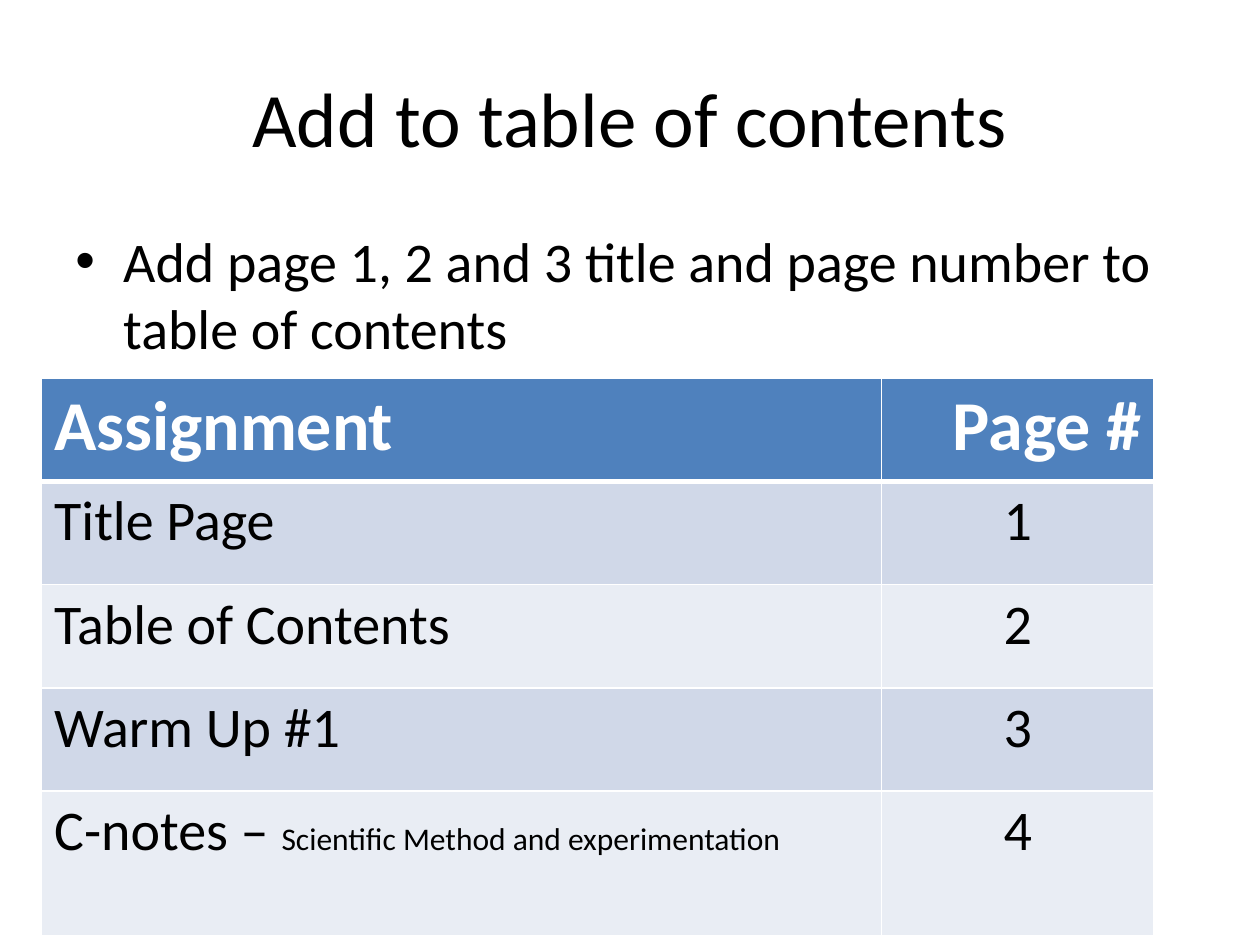
from lxml import etree
from pptx import Presentation
from pptx.dml.color import RGBColor
from pptx.enum.text import MSO_ANCHOR, PP_ALIGN
from pptx.oxml.ns import qn
from pptx.util import Inches, Pt

LEFT, CENTER, RIGHT = PP_ALIGN.LEFT, PP_ALIGN.CENTER, PP_ALIGN.RIGHT
TOP, MIDDLE = MSO_ANCHOR.TOP, MSO_ANCHOR.MIDDLE

BLACK = RGBColor(0x00, 0x00, 0x00)
WHITE = RGBColor(0xFF, 0xFF, 0xFF)
HEADER_BLUE = RGBColor(0x4F, 0x81, 0xBD)
BANDS = (RGBColor(0xD0, 0xD8, 0xE8), RGBColor(0xE9, 0xED, 0xF4))

WIDTH, HEIGHT = 10, 7.5
MARGIN = WIDTH * 0.05
TITLE_BOX = (MARGIN, HEIGHT * 0.04, WIDTH * 0.9, 1.25)
BODY_BOX = (MARGIN, 1.75, WIDTH * 0.9, 4.95)
TABLE_BOX = (0.33, HEIGHT * 0.4, 8.83, 4.43)
ASSIGNMENT_SHARE = 0.755
ROW_HEIGHT = 0.82

HEADINGS = ("Assignment", "Page #")
ENTRIES = (
    (("Title Page", 32),),
    (("Table of Contents", 32),),
    (("Warm Up #1", 32),),
    (("C-notes – ", 32), ("Scientific Method and experimentation", 18)),
)


def add_span(para, text, size, color=BLACK, bold=False):
    span = para.add_run()
    span.text = text
    formats = {"name": "Calibri", "size": Pt(size), "bold": bold}
    for name, value in formats.items():
        setattr(span.font, name, value)
    span.font.color.rgb = color


def add_text_frame(page, box, anchor):
    frame = page.shapes.add_textbox(*map(Inches, box)).text_frame
    frame.word_wrap = True
    frame.vertical_anchor = anchor
    return frame


def add_title(page, box):
    para = add_text_frame(page, box, MIDDLE).paragraphs[0]
    para.alignment = CENTER
    add_span(para, "Add to table of contents", 44)


def add_instruction(page, box):
    para = add_text_frame(page, box, TOP).paragraphs[0]
    para.space_before = Pt(6.4)
    add_span(para, "Add page 1, 2 and 3 title and page number to table of contents", 32)
    properties = para._p.get_or_add_pPr()
    indent = Inches(0.38)
    properties.set("marL", str(indent))
    properties.set("indent", str(-indent))
    etree.SubElement(properties, qn("a:buFont"), typeface="Arial")
    etree.SubElement(properties, qn("a:buChar"), char="•")


def set_borders(cell, widths):
    properties = cell._tc.get_or_add_tcPr()
    for index, (side, width) in enumerate(widths.items()):
        line = etree.Element(qn(f"a:ln{side}"), w=str(Pt(width)))
        fill = etree.SubElement(line, qn("a:solidFill"))
        etree.SubElement(fill, qn("a:srgbClr"), val=str(WHITE))
        properties.insert(index, line)


def fill_cell(cell, spans, alignment, fill, color, bold, borders):
    cell.fill.solid()
    cell.fill.fore_color.rgb = fill
    set_borders(cell, borders)
    para = cell.text_frame.paragraphs[0]
    para.alignment = alignment
    for text, size in spans:
        add_span(para, text, size, color, bold)


def add_contents_table(page, box):
    left, top, width, height = box
    count = len(ENTRIES) + 1
    table = page.shapes.add_table(count, 2, *map(Inches, box)).table
    for column, share in zip(table.columns, (ASSIGNMENT_SHARE, 1 - ASSIGNMENT_SHARE)):
        column.width = Inches(width * share)
    for row in table.rows:
        row.height = Inches(ROW_HEIGHT)
    table.rows[count - 1].height = Inches(height - ROW_HEIGHT * (count - 1))

    borders = {"L": 1, "R": 1, "T": 1, "B": 3}
    for column, (heading, alignment) in enumerate(zip(HEADINGS, (LEFT, RIGHT))):
        fill_cell(table.cell(0, column), ((heading, 40),), alignment,
                  HEADER_BLUE, WHITE, True, borders)
    for number, spans in enumerate(ENTRIES, 1):
        borders = {"L": 1, "R": 1, "T": 3 if number == 1 else 1, "B": 1}
        contents = ((spans, LEFT), (((str(number), 32),), CENTER))
        for column, (cell_spans, alignment) in enumerate(contents):
            fill_cell(table.cell(number, column), cell_spans, alignment,
                      BANDS[(number - 1) % 2], BLACK, False, borders)


def main():
    deck = Presentation()
    deck.slide_width, deck.slide_height = Inches(WIDTH), Inches(HEIGHT)
    page = deck.slides.add_slide(deck.slide_layouts[6])
    add_title(page, TITLE_BOX)
    add_instruction(page, BODY_BOX)
    add_contents_table(page, TABLE_BOX)
    deck.save("out.pptx")


if __name__ == "__main__":
    main()
